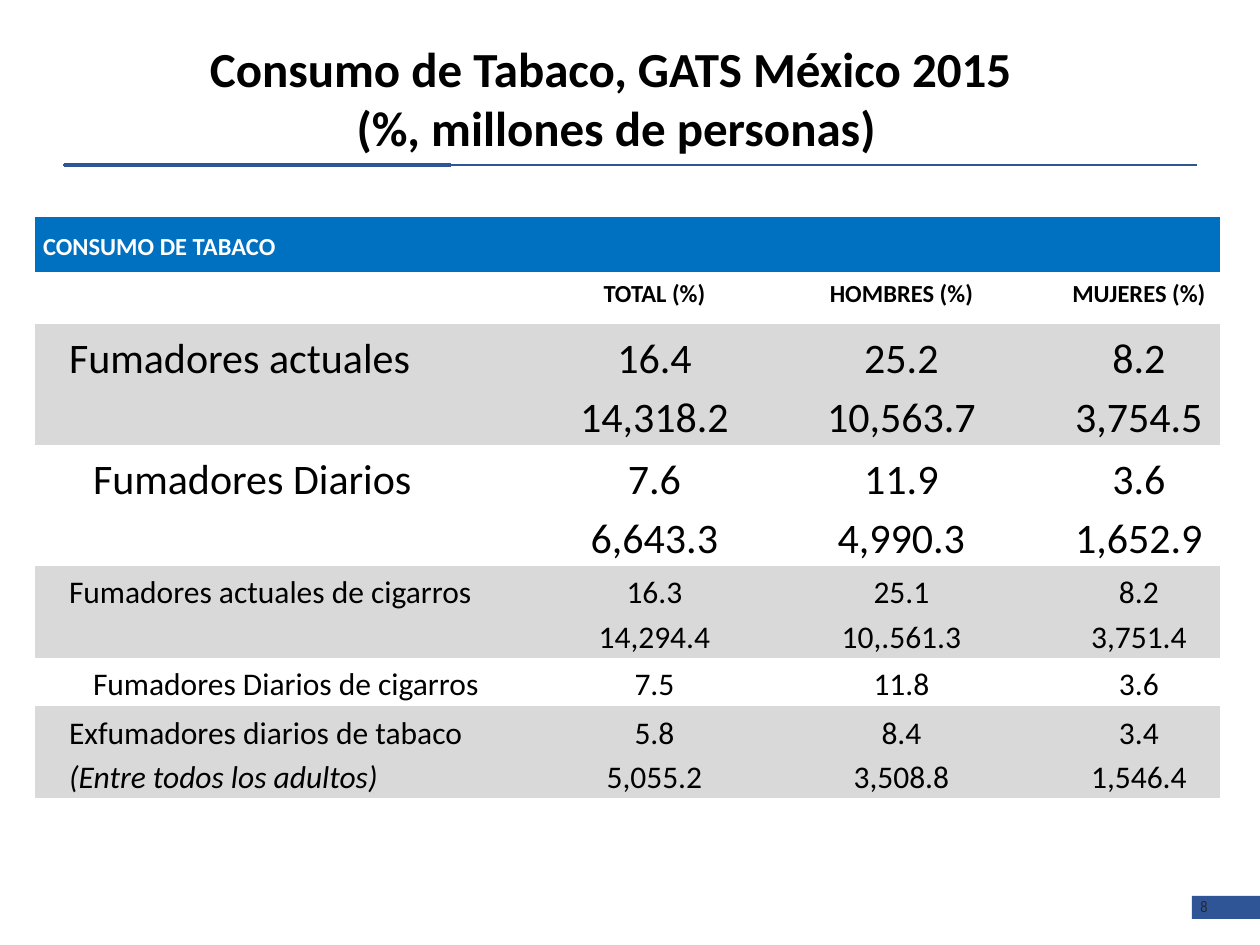
import pptx
import pptx.util
import pptx.dml.color
import pptx.enum.shapes
import pptx.enum.text
import pptx.oxml.ns
import lxml.etree

RGBColor = pptx.dml.color.RGBColor
Align = pptx.enum.text.PP_ALIGN
Anchor = pptx.enum.text.MSO_ANCHOR

NAVY = RGBColor(0x2F, 0x55, 0x97)
HEADER_BLUE = RGBColor(0x00, 0x70, 0xC0)
BAND_GRAY = RGBColor(0xD9, 0xD9, 0xD9)
DARK_GRAY = RGBColor(0x26, 0x26, 0x26)
BLACK = RGBColor(0, 0, 0)
WHITE = RGBColor(255, 255, 255)

EMU_PER_PX = 914400 / 126
NO_TABLE_STYLE = "{2D5ABB26-0587-4C30-8999-92F81FD0307C}"

COLUMN_WIDTHS = [466, 244, 250, 225]
ROW_HEIGHTS = [55, 52, 68, 68, 68, 45, 68]
VALUE_INDENT = 63
LABEL_INDENT = 25
SUBLABEL_INDENT = 49

HEADINGS = ["TOTAL (%)", "HOMBRES (%)", "MUJERES (%)"]
ROWS = [
    (24, LABEL_INDENT, ["Fumadores actuales"],
     [["16.4", "14,318.2"], ["25.2", "10,563.7"], ["8.2", "3,754.5"]]),
    (24, SUBLABEL_INDENT, ["Fumadores Diarios"],
     [["7.6", "6,643.3"], ["11.9", "4,990.3"], ["3.6", "1,652.9"]]),
    (18, LABEL_INDENT, ["Fumadores actuales de cigarros"],
     [["16.3", "14,294.4"], ["25.1", "10,.561.3"], ["8.2", "3,751.4"]]),
    (18, SUBLABEL_INDENT, ["Fumadores Diarios de cigarros"],
     [["7.5"], ["11.8"], ["3.6"]]),
    (18, LABEL_INDENT, ["Exfumadores diarios de tabaco", "(Entre todos los adultos)"],
     [["5.8", "5,055.2"], ["8.4", "3,508.8"], ["3.4", "1,546.4"]]),
]


def px(length):
    return pptx.util.Emu(round(length * EMU_PER_PX))


def style_font(paragraph, size, color, name="Calibri", bold=False):
    font = paragraph.font
    font.name = name
    font.size = pptx.util.Pt(size)
    font.bold = bold
    font.color.rgb = color


def add_rule(page, left, right, y, weight):
    rule = page.shapes.add_connector(
        pptx.enum.shapes.MSO_CONNECTOR.STRAIGHT, px(left), px(y), px(right), px(y))
    rule.line.color.rgb = NAVY
    rule.line.width = pptx.util.Pt(weight)
    lxml.etree.SubElement(rule._element.spPr, pptx.oxml.ns.qn("a:effectLst"))


def add_text(page, left, top, width, height, text, wrap=True):
    box = page.shapes.add_textbox(px(left), px(top), px(width), px(height))
    box.text_frame.word_wrap = wrap
    box.text_frame.text = text
    return box.text_frame


def add_title(page):
    frame = add_text(page, 35, 18, 1162, 158,
                     "Consumo de Tabaco, GATS México 2015 \v(%, millones de personas)")
    frame.vertical_anchor = Anchor.MIDDLE
    frame.paragraphs[0].alignment = Align.CENTER
    style_font(frame.paragraphs[0], 28, BLACK, bold=True)


def add_page_number(page):
    marker = page.shapes.add_shape(
        pptx.enum.shapes.MSO_SHAPE.RECTANGLE, px(1192), px(896), px(68), px(23))
    marker.shadow.inherit = False
    marker.fill.solid()
    marker.fill.fore_color.rgb = NAVY
    marker.line.fill.background()
    frame = add_text(page, 1188, 891, 49, 31, "8", wrap=False)
    style_font(frame.paragraphs[0], 9, DARK_GRAY, name="Arial Narrow")


def fill_cell(cell, lines, size, indent=0, align=Align.LEFT, color=BLACK,
              bold=False, margin=8):
    cell.margin_left = cell.margin_right = px(margin)
    cell.margin_top = cell.margin_bottom = px(2.5)
    cell.text = "\n".join(lines)
    for para in cell.text_frame.paragraphs:
        para.alignment = align
        para.line_spacing = 1.15
        style_font(para, size, color, bold=bold)
        para._p.get_or_add_pPr().set("marL", str(px(indent)))


def add_table(page):
    frame = page.shapes.add_table(
        len(ROW_HEIGHTS), len(COLUMN_WIDTHS), px(35), px(217),
        px(sum(COLUMN_WIDTHS)), px(sum(ROW_HEIGHTS)))
    table = frame.table
    table.first_row = table.horz_banding = False
    table._tbl.tblPr.find(pptx.oxml.ns.qn("a:tableStyleId")).text = NO_TABLE_STYLE
    for column, width in zip(table.columns, COLUMN_WIDTHS):
        column.width = px(width)
    for row, height in zip(table.rows, ROW_HEIGHTS):
        row.height = px(height)

    banner = table.cell(0, 0)
    banner.merge(table.cell(0, len(COLUMN_WIDTHS) - 1))
    fill_cell(banner, ["CONSUMO DE TABACO"], 14, color=WHITE, bold=True)
    banner.margin_top = banner.margin_bottom = 0
    banner.vertical_anchor = Anchor.MIDDLE
    banner_para = banner.text_frame.paragraphs[0]
    banner_para.space_before = banner_para.space_after = pptx.util.Pt(2)

    for column, heading in enumerate(HEADINGS, 1):
        fill_cell(table.cell(1, column), [heading], 14, VALUE_INDENT,
                  Align.CENTER, bold=True)
    for number, (size, indent, label, values) in enumerate(ROWS, 2):
        fill_cell(table.cell(number, 0), label, size, indent, margin=9)
        for column, lines in enumerate(values, 1):
            fill_cell(table.cell(number, column), lines, size, VALUE_INDENT,
                      Align.CENTER, margin=9)

    note = table.cell(len(ROW_HEIGHTS) - 1, 0).text_frame.paragraphs[1]
    note.font.italic = True
    note.space_after = pptx.util.Pt(3)

    for number, row in enumerate(table.rows):
        for cell in row.cells:
            if number % 2:
                cell.fill.background()
            else:
                cell.fill.solid()
                cell.fill.fore_color.rgb = BAND_GRAY if number else HEADER_BLUE


def main():
    deck = pptx.Presentation()
    deck.slide_width = px(1260)
    deck.slide_height = px(945)
    page = deck.slides.add_slide(deck.slide_layouts[6])
    add_rule(page, 63, 1197, 165, 1)
    add_rule(page, 64, 451, 165, 2.25)
    add_page_number(page)
    add_title(page)
    add_table(page)
    deck.save("out.pptx")


if __name__ == "__main__":
    main()
